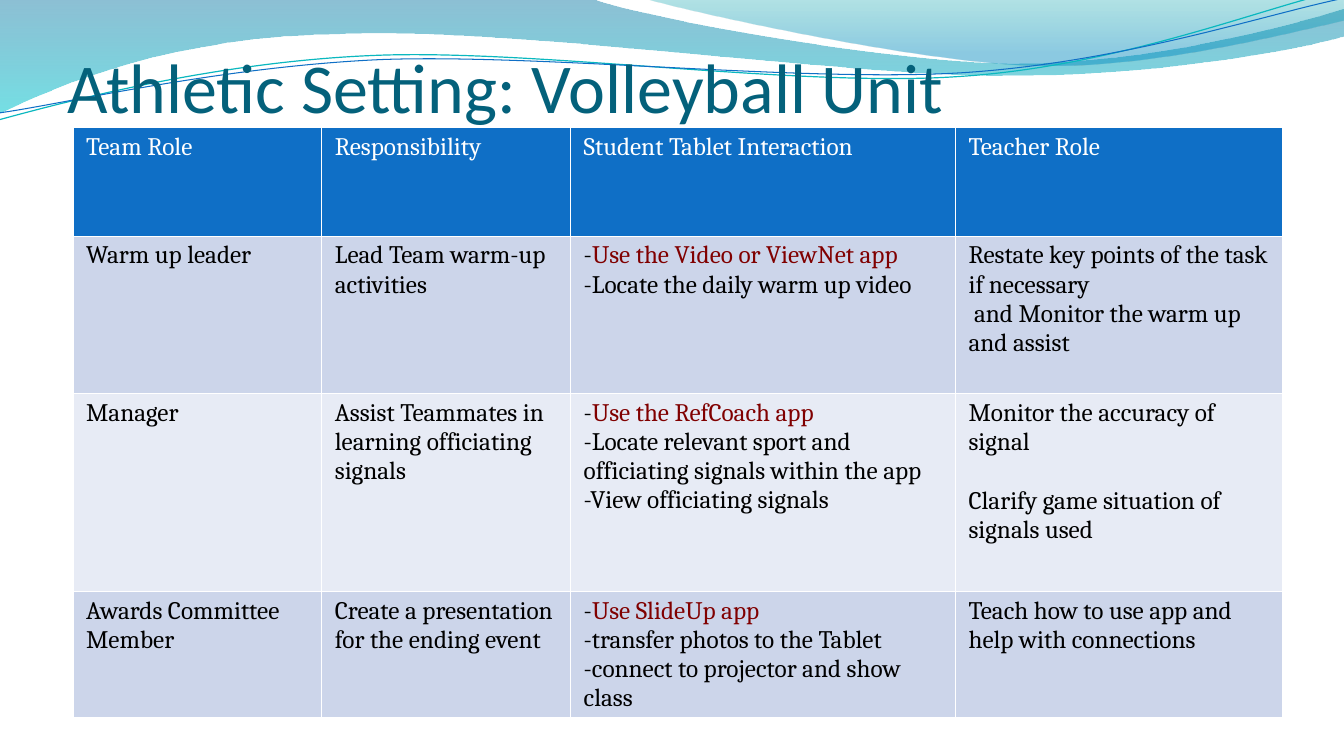
import math

from lxml import etree
from pptx import Presentation, util as u
from pptx.dml.color import RGBColor
from pptx.enum import text
from pptx.oxml import ns

WHITE = RGBColor(0xFF, 0xFF, 0xFF)
BLACK = RGBColor(0, 0, 0)
MAROON = RGBColor(0x80, 0, 0)
TEAL = RGBColor(0x04, 0x61, 0x7B)
BLUE = RGBColor(0x0F, 0x6F, 0xC6)
AQUA = RGBColor(0x0A, 0xB8, 0xBF)
BAND_DARK = RGBColor(0xCC, 0xD5, 0xEA)
BAND_LIGHT = RGBColor(0xE7, 0xEB, 0xF5)

TITLE = "Athletic Setting: Volleyball Unit"
# Each cell is a list of paragraphs; a tuple is a dash and a highlighted app.
ROLES = [
    [["Team Role"], ["Responsibility"], ["Student Tablet Interaction"], ["Teacher Role"]],
    [["Warm up leader"],
     ["Lead Team warm-up activities"],
     [("-", "Use the Video or ViewNet app"), "-Locate the daily warm up video"],
     ["Restate key points of the task if necessary", " and Monitor the warm up and assist"]],
    [["Manager"],
     ["Assist Teammates in learning officiating signals"],
     [("-", "Use the RefCoach app"),
      "-Locate relevant sport and officiating signals within the app",
      "-View officiating signals"],
     ["Monitor the accuracy of signal", "Clarify game situation of signals used"]],
    [["Awards Committee", "Member"],
     ["Create a presentation for the ending event"],
     [("-", "Use SlideUp app"), "-transfer photos to the Tablet",
      "-connect to projector and show class"],
     ["Teach how to use app and help with connections"]],
]
SPACED_PARAGRAPH = (2, 3, 1)  # row, column, paragraph set one line lower
COLUMN_WIDTHS = [6.27, 6.27, 9.7, 8.24]
ROW_HEIGHTS = [2.74, 3.97, 4.98, 3.18]
TABLE_LEFT, TABLE_TOP = 1.84, 3.21

# Outlines in cm: a start point, then lines (one point) or Bézier curves (three).
BANDS = [
    ([(0, 0), [(14.91, -0.03)],
      [(16.1, 0.43), (22.48, 1.6), (25.68, 1.6)],
      [(28.91, 1.6), (32.46, 0.66), (33.86, 0.23)],
      [(33.91, 0.91)],
      [(33.3, 1.12), (29.46, 1.93), (25.25, 1.91)],
      [(21.06, 1.91), (12.93, 0.71), (8.71, 0.86)],
      [(4.34, 0.91), (1.55, 2.11), (-0.03, 2.87)],
      [(0, 0)]],
     [(0, RGBColor(0, 0x74, 0xA1), 45), (1, RGBColor(0, 0xC6, 0xCF), 55)]),
    ([(16.23, -0.03),
      [(17.25, 0.28), (23.09, 1.57), (26.04, 1.65)],
      [(28.98, 1.75), (32.56, 0.81), (33.86, 0.53)],
      [(33.86, 0)], [(16.23, -0.03)]],
     [(0, RGBColor(0, 0xA1, 0xA9), 30), (0.8, RGBColor(0, 0x8B, 0xBF), 45)]),
]
WAVES = [
    ([(-0.03, 3.02),
      [(1.63, 2.57), (5.36, 1.57), (9.37, 1.4)],
      [(13.39, 1.22), (20.07, 2.21), (24.13, 1.93)],
      [(28.19, 1.68), (31.8, 0.2), (33.81, -0.25)]], AQUA, 0.85),
    ([(0, 2.84),
      [(1.6, 2.62), (5.54, 1.68), (9.6, 1.5)],
      [(13.64, 1.35), (20.22, 2.08), (24.26, 1.83)],
      [(28.32, 1.57), (31.88, 0.36), (33.88, -0.05)]], BLUE, 0.75),
]
WAVE_TILT = 2.7  # degrees, counter-clockwise
WAVE_CENTRE = (16.9, 1.46)


def assign(target, values):
    for name, value in values.items():
        setattr(target, name, value)


def level(point):
    """Undo the tilt of a wave, which its rotation gives back."""
    dx, dy = (value - middle for value, middle in zip(point, WAVE_CENTRE))
    sin, cos = math.sin(math.radians(WAVE_TILT)), math.cos(math.radians(WAVE_TILT))
    return WAVE_CENTRE[0] + dx * cos - dy * sin, WAVE_CENTRE[1] + dx * sin + dy * cos


def draw_outline(slide, outline, close):
    """Join the end points, then bend each three-point segment into a curve."""
    start, *segments = outline
    builder = slide.shapes.build_freeform(u.Cm(start[0]), u.Cm(start[1]))
    builder.add_line_segments([(u.Cm(x), u.Cm(y)) for x, y in (s[-1] for s in segments)],
                              close=close)
    drawn = builder.convert_to_shape()
    drawn.shadow.inherit = False
    sides = list(drawn.element.spPr.iter(ns.qn("a:lnTo")))
    for side, segment in zip(sides, segments):
        if len(segment) == 3:
            side.getparent().replace(side, curve_xml(drawn, side, segment))
    return drawn


def curve_xml(drawn, side, segment):
    curve = etree.Element(ns.qn("a:cubicBezTo"))
    for x, y in segment[:2]:
        etree.SubElement(curve, ns.qn("a:pt"),
                         x=str(u.Cm(x) - drawn.left), y=str(u.Cm(y) - drawn.top))
    curve.append(side[0])
    return curve


def draw_band(slide, outline, stops):
    band = draw_outline(slide, outline, True)
    band.line.fill.background()
    band.fill.gradient()
    band.fill.gradient_angle = 270
    for stop, (position, color, _) in zip(band.fill.gradient_stops, stops):
        stop.position = position
        stop.color.rgb = color
    for color_xml, (_, _, opacity) in zip(band.element.spPr.iter(ns.qn("a:srgbClr")), stops):
        etree.SubElement(color_xml, ns.qn("a:alpha"), val=str(opacity * 1000))


def draw_wave(slide, outline, color, width):
    start, *curves = outline
    flat = [level(start)] + [[level(point) for point in curve] for curve in curves]
    wave = draw_outline(slide, flat, False)
    wave.rotation = 360 - WAVE_TILT
    wave.fill.background()
    wave.line.color.rgb = color
    wave.line.width = u.Pt(width)


def set_borders(cell):
    properties = cell._tc.get_or_add_tcPr()
    for side in "LRTB":
        border = etree.SubElement(properties, ns.qn(f"a:ln{side}"), w=str(u.Pt(1)))
        solid = etree.SubElement(border, ns.qn("a:solidFill"))
        etree.SubElement(solid, ns.qn("a:srgbClr"), val=str(WHITE))


def write_cell(cell, paragraphs, color, spaced):
    frame = cell.text_frame
    for index, content in enumerate(paragraphs):
        paragraph = frame.add_paragraph() if index else frame.paragraphs[0]
        if index == spaced:
            paragraph.space_before = u.Pt(21)
        pieces = [content] if isinstance(content, str) else content
        for piece, piece_color in zip(pieces, (color, MAROON)):
            run = paragraph.add_run()
            run.text = piece
            assign(run.font, {"name": "Cambria", "size": u.Pt(18), "bold": False})
            run.font.color.rgb = piece_color


def write_title(slide):
    title = slide.shapes.title
    assign(title, {"left": u.Cm(1.7), "top": u.Cm(0.03),
                   "width": u.Cm(30.48), "height": u.Cm(3.18)})
    title.text_frame.text = TITLE
    assign(title.text_frame, {"margin_left": 0, "margin_right": 0, "margin_bottom": 0,
                              "margin_top": u.Cm(0.13), "word_wrap": True,
                              "auto_size": text.MSO_AUTO_SIZE.NONE,
                              "vertical_anchor": text.MSO_ANCHOR.BOTTOM})
    heading = title.text_frame.paragraphs[0]
    heading.alignment = text.PP_ALIGN.LEFT
    assign(heading.runs[0].font, {"name": "Calibri", "size": u.Pt(50)})
    heading.runs[0].font.color.rgb = TEAL
    title.element.getparent().append(title.element)  # in front of the waves


def add_roles(slide):
    roles = slide.shapes.add_table(
        len(ROLES), len(COLUMN_WIDTHS), u.Cm(TABLE_LEFT), u.Cm(TABLE_TOP),
        u.Cm(sum(COLUMN_WIDTHS)), u.Cm(sum(ROW_HEIGHTS))).table
    for column, width in zip(roles.columns, COLUMN_WIDTHS):
        column.width = u.Cm(width)
    for r, (row, height) in enumerate(zip(ROLES, ROW_HEIGHTS)):
        roles.rows[r].height = u.Cm(height)
        fill = BLUE if r == 0 else BAND_DARK if r % 2 else BAND_LIGHT
        for c, paragraphs in enumerate(row):
            cell = roles.cell(r, c)
            spaced = SPACED_PARAGRAPH[2] if (r, c) == SPACED_PARAGRAPH[:2] else None
            write_cell(cell, paragraphs, BLACK if r else WHITE, spaced)
            assign(cell, {"margin_left": u.Cm(0.33), "margin_right": u.Cm(0.33),
                          "margin_top": u.Cm(0.13), "margin_bottom": u.Cm(0.13)})
            set_borders(cell)
            cell.fill.solid()
            cell.fill.fore_color.rgb = fill


def main():
    deck = Presentation()
    assign(deck, {"slide_width": u.Cm(33.87), "slide_height": u.Cm(19.05)})
    slide = deck.slides.add_slide(deck.slide_layouts[5])
    for band in BANDS:
        draw_band(slide, *band)
    for wave in WAVES:
        draw_wave(slide, *wave)
    write_title(slide)
    add_roles(slide)
    deck.save("out.pptx")


if __name__ == "__main__":
    main()
